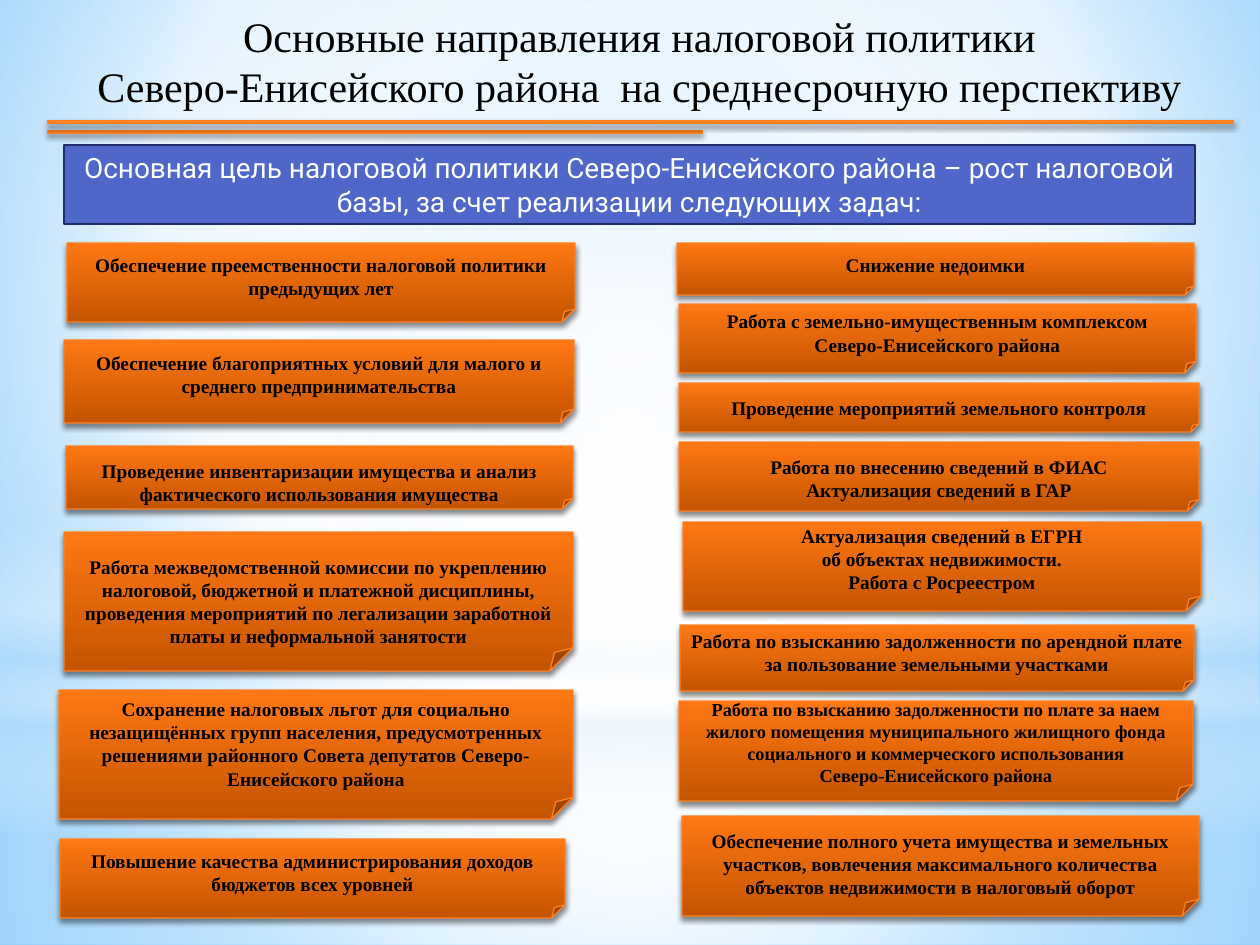
from dataclasses import dataclass

from lxml import etree
from pptx import Presentation
from pptx.dml.color import RGBColor
from pptx.enum.shapes import MSO_CONNECTOR, MSO_SHAPE
from pptx.enum.text import MSO_ANCHOR, PP_ALIGN
from pptx.oxml.ns import qn
from pptx.util import Emu, Pt

RECT, OVAL, FOLDED = MSO_SHAPE.RECTANGLE, MSO_SHAPE.OVAL, MSO_SHAPE.FOLDED_CORNER
STRAIGHT = MSO_CONNECTOR.STRAIGHT
TOP, MIDDLE = MSO_ANCHOR.TOP, MSO_ANCHOR.MIDDLE
CENTER = PP_ALIGN.CENTER

EMU_PER_PX = 914400 / 126
SERIF, SANS = "Times New Roman", "Roboto"
COLORS = {
    "black": "000000", "white": "FFFFFF", "sky": "9ED5FF", "azure": "5BB9FF",
    "mist": "B4DCFA", "orange": "FF8021", "orange_top": "FF7813",
    "orange_bottom": "C45400", "goal": "4E67C8", "goal_edge": "1F2E69",
}


@dataclass(frozen=True)
class Stop:
    position: int
    color: str
    opacity: int = 100


@dataclass(frozen=True)
class Haze:
    kind: int
    top: int
    height: int
    stops: tuple[Stop, ...]
    focus: tuple[int, ...] | None = (50, 50, 50, 50)


@dataclass(frozen=True)
class Task:
    left: int
    top: int
    width: int
    height: int
    text: str
    anchor: int = MIDDLE
    size: float = 11
    pad_top: int = 13
    pad_bottom: int = 13


HAZES = (
    Haze(RECT, 703, 242, (Stop(0, "white", 91), Stop(37, "white", 76), Stop(100, "mist", 79))),
    Haze(RECT, 0, 703, (Stop(0, "white", 89), Stop(48, "white", 62), Stop(100, "mist", 79))),
    Haze(RECT, 519, 315, (Stop(0, "white", 0), Stop(29, "white", 30), Stop(45, "mist", 40),
                          Stop(55, "white", 26), Stop(65, "mist", 60), Stop(100, "white", 0)), None),
    Haze(OVAL, 220, 703, (Stop(0, "white"), Stop(56, "white", 0))),
)
TASK_STOPS = (Stop(0, "orange_top"), Stop(100, "orange_bottom"))

TASKS = (
    Task(67, 243, 508, 79, "Обеспечение преемственности налоговой политики предыдущих лет"),
    Task(64, 340, 510, 83, "Обеспечение благоприятных условий для малого и среднего предпринимательства"),
    Task(66, 446, 507, 63, "Проведение инвентаризации имущества и анализ фактического использования имущества", TOP),
    Task(64, 532, 509, 139, "Работа межведомственной комиссии по укреплению налоговой, бюджетной и платежной "
         "дисциплины, проведения мероприятий по легализации заработной платы и неформальной занятости",
         pad_top=24, pad_bottom=1),
    Task(59, 690, 514, 129, "Сохранение налоговых льгот для социально незащищённых групп населения, "
         "предусмотренных решениями районного Совета депутатов Северо-Енисейского района"),
    Task(60, 839, 505, 79, "Повышение качества администрирования доходов бюджетов всех уровней"),
    Task(677, 243, 517, 52, "Снижение недоимки"),
    Task(679, 304, 517, 69, "Работа с земельно-имущественным комплексом\nСеверо-Енисейского района"),
    Task(679, 383, 520, 49, "Проведение мероприятий земельного контроля", TOP),
    Task(679, 442, 520, 69, "Работа по внесению сведений в ФИАС\nАктуализация сведений в ГАР", TOP),
    Task(683, 522, 518, 89, "Актуализация сведений в ЕГРН\nоб объектах недвижимости.\nРабота с Росреестром"),
    Task(680, 625, 514, 66, "Работа по взысканию задолженности по арендной плате за пользование земельными участками"),
    Task(679, 701, 514, 100, "Работа по взысканию задолженности по плате за наем жилого помещения муниципального "
         "жилищного фонда социального и коммерческого использования\nСеверо-Енисейского района", size=10.5),
    Task(682, 816, 517, 100, "Обеспечение полного учета имущества и земельных участков, вовлечения "
         "максимального количества объектов недвижимости в налоговый оборот", TOP),
)


def px(value: int) -> Emu:
    return Emu(round(value * EMU_PER_PX))


def rgb(name: str) -> RGBColor:
    return RGBColor.from_string(COLORS[name])


def add_color(parent, name: str, opacity: int) -> None:
    color = etree.SubElement(parent, qn("a:srgbClr"), val=COLORS[name])
    if opacity < 100:
        etree.SubElement(color, qn("a:alpha"), val=str(opacity * 1000))


def set_gradient(fill, element, stops: tuple[Stop, ...], focus=None) -> None:
    """Radial around focus (left, top, right, bottom in %), or top to bottom without it."""
    fill.gradient()
    gradient = element.find(".//" + qn("a:gradFill"))
    for child in list(gradient):
        gradient.remove(child)
    stop_list = etree.SubElement(gradient, qn("a:gsLst"))
    for stop in stops:
        node = etree.SubElement(stop_list, qn("a:gs"), pos=str(stop.position * 1000))
        add_color(node, stop.color, stop.opacity)
    if focus:
        radial = etree.SubElement(gradient, qn("a:path"), path="circle")
        sides = {side: str(share * 1000) for side, share in zip("ltrb", focus)}
        etree.SubElement(radial, qn("a:fillToRect"), **sides)
    else:
        etree.SubElement(gradient, qn("a:lin"), ang="5400000", scaled="0")


def add_shadow(shape) -> None:
    properties = shape._element.spPr
    effects = properties.find(qn("a:effectLst"))
    if effects is None:
        effects = etree.SubElement(properties, qn("a:effectLst"))
    shadow = etree.SubElement(effects, qn("a:outerShdw"), blurRad=str(Pt(3.1)), dist=str(Pt(1.8)),
                              dir="5400000", rotWithShape="0")
    add_color(shadow, "black", 45)


def write(shape, text: str, *, size: float, font: str = SERIF, color: str = "black", bold: bool = False,
          anchor: int = MIDDLE, margins: tuple[int, ...] = (13, 6, 13, 6)) -> None:
    frame = shape.text_frame
    frame.word_wrap = True
    frame.vertical_anchor = anchor
    frame.margin_left, frame.margin_top, frame.margin_right, frame.margin_bottom = map(px, margins)
    frame.text = text
    for paragraph in frame.paragraphs:
        paragraph.alignment = CENTER
        for run in paragraph.runs:
            run.font.size, run.font.name, run.font.bold = Pt(size), font, bold
            run.font.color.rgb = rgb(color)


def add_plain_shape(slide, kind: int, left: int, top: int, width: int, height: int):
    shape = slide.shapes.add_shape(kind, px(left), px(top), px(width), px(height))
    shape.shadow.inherit = False
    return shape


def outline(shape, color: str, width: float) -> None:
    shape.line.color.rgb = rgb(color)
    shape.line.width = Pt(width)


def add_haze(slide, haze: Haze) -> None:
    shape = add_plain_shape(slide, haze.kind, 0, haze.top, 1260, haze.height)
    set_gradient(shape.fill, shape._element, haze.stops, haze.focus)
    shape.line.fill.background()


def add_rule(slide, right: int, y: int) -> None:
    rule = slide.shapes.add_connector(STRAIGHT, px(47), px(y), px(right), px(y))
    outline(rule, "orange", 2)
    add_shadow(rule)


def add_task(slide, task: Task) -> None:
    card = add_plain_shape(slide, FOLDED, task.left, task.top, task.width, task.height)
    set_gradient(card.fill, card._element, TASK_STOPS)
    outline(card, "orange", 0.75)
    add_shadow(card)
    write(card, task.text, size=task.size, bold=True, anchor=task.anchor,
          margins=(3, task.pad_top, 3, task.pad_bottom))


def main() -> None:
    deck = Presentation()
    deck.slide_width, deck.slide_height = px(1260), px(945)
    slide = deck.slides.add_slide(deck.slide_layouts[6])
    set_gradient(slide.background.fill, slide._element,
                 (Stop(0, "sky"), Stop(60, "white"), Stop(100, "azure")), (20, 10, 20, 60))
    for haze in HAZES:
        add_haze(slide, haze)

    title = slide.shapes.add_textbox(px(34), px(16), px(1211), px(90))
    write(title, "Основные направления налоговой политики\n"
          "Северо-Енисейского района  на среднесрочную перспективу", size=24)
    add_rule(slide, 703, 132)
    add_rule(slide, 1234, 122)

    goal = add_plain_shape(slide, RECT, 64, 145, 1131, 79)
    goal.fill.solid()
    goal.fill.fore_color.rgb = rgb("goal")
    outline(goal, "goal_edge", 1.25)
    write(goal, "Основная цель налоговой политики Северо-Енисейского района – рост налоговой базы, "
          "за счет реализации следующих задач:", size=16, font=SANS, color="white")

    for task in TASKS:
        add_task(slide, task)
    deck.save("out.pptx")


if __name__ == "__main__":
    main()
